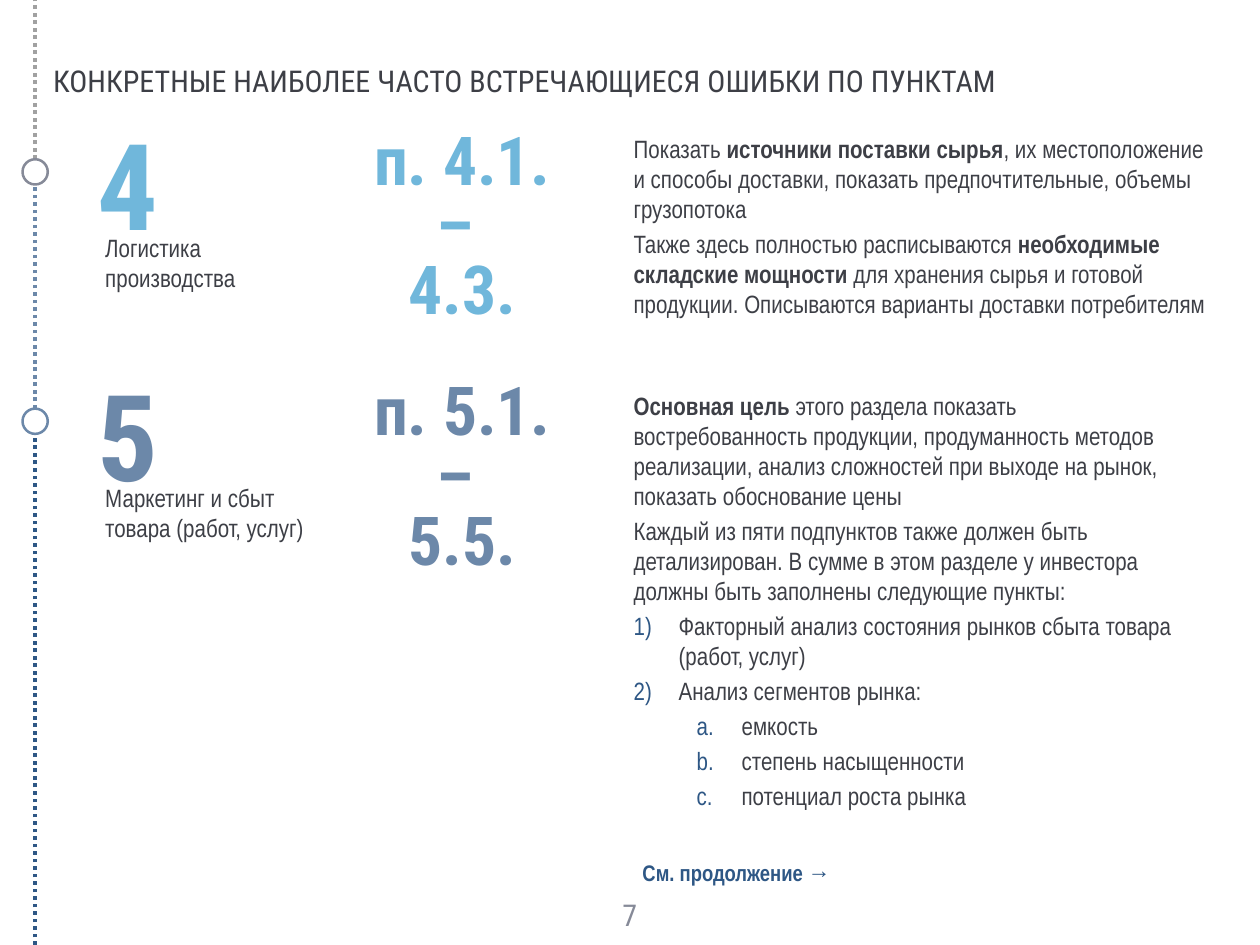
"""Build the slide on frequent mistakes in business plan sections 4 and 5."""
from lxml.etree import SubElement
from pptx import Presentation
from pptx.dml.color import RGBColor
from pptx.enum.dml import MSO_LINE_DASH_STYLE as Dash
from pptx.enum.shapes import MSO_CONNECTOR, MSO_SHAPE
from pptx.enum.text import MSO_ANCHOR as Anchor, MSO_AUTO_SIZE as AutoSize, PP_ALIGN as Align
from pptx.oxml.ns import qn
from pptx.util import Pt

COLORS = {
    "text": "3D3F46",
    "muted": "868A98",
    "sky": "70B7DB",
    "slate": "6C88A9",
    "navy": "2E5785",
    "gray": "A1A1A1",
    "white": "FFFFFF",
}
HEADING_FONT = "Roboto Condensed"
BODY_FONT = "Arial Narrow"
SLIDE_WIDTH, SLIDE_HEIGHT = 1008, 756
AXIS_X = 28.1
MARKER_SIZE = 20.2
MARKER_TOPS = (127.4, 326.9)
ROW_PITCH = 200.5
LIST_LEVELS = {"number": (0, 36, "arabicParenR"), "letter": (1, 86.4, "alphaLcPeriod")}

SECTIONS = [
    {
        "number": "4",
        "color": "sky",
        "caption": "Логистика производства",
        "points": ["п. 4.1. – ", "4.3."],
        "body_box": (506.9, 106.6, 465.1, 150.5),
        "body": [
            "Показать *источники поставки сырья*, их местоположение и способы доставки, "
            "показать предпочтительные, объемы грузопотока",
            "Также здесь полностью расписываются *необходимые складские мощности *"
            "для хранения сырья и готовой продукции. Описываются варианты доставки потребителям",
        ],
    },
    {
        "number": "5",
        "color": "slate",
        "caption": "Маркетинг и сбыт товара (работ, услуг)",
        "points": ["п. 5.1. – ", "5.5."],
        "body_box": (506.9, 312.5, 430.6, 344.2),
        "body": [
            "*Основная цель *этого раздела показать востребованность продукции, "
            "продуманность методов реализации, анализ сложностей при выходе на рынок, "
            "показать обоснование цены",
            "Каждый из пяти подпунктов также должен быть детализирован. В сумме в этом "
            "разделе у инвестора должны быть заполнены следующие пункты:",
            ("number", "Факторный анализ состояния рынков сбыта товара (работ, услуг)"),
            ("number", "Анализ сегментов рынка:"),
            ("letter", "емкость"),
            ("letter", "степень насыщенности"),
            ("letter", "потенциал роста рынка"),
        ],
    },
]


def rgb(name):
    """Return the named colour."""
    return RGBColor.from_string(COLORS[name])


def add_list_marker(paragraph, kind):
    """Turn a paragraph into an automatically numbered list item."""
    level, margin, scheme = LIST_LEVELS[kind]
    paragraph.level = level
    properties = paragraph._p.get_or_add_pPr()
    properties.set("marL", str(Pt(margin)))
    properties.set("indent", str(Pt(-36)))
    color = SubElement(properties, qn("a:buClr"))
    SubElement(color, qn("a:srgbClr"), val=COLORS["navy"])
    SubElement(properties, qn("a:buFont"), typeface="+mj-lt")
    SubElement(properties, qn("a:buAutoNum"), type=scheme)


def add_text(slide, box, paragraphs, *, size=20, font=BODY_FONT, color="text", bold=False,
             align=Align.LEFT, anchor=Anchor.TOP, gap=0, spacing=None, wrap=True,
             insets=(0, 0, 0, 0)):
    """Add a text box; asterisks switch bold, and a (kind, text) pair is a list item."""
    shape = slide.shapes.add_textbox(*map(Pt, box))
    frame = shape.text_frame
    frame.word_wrap = wrap
    frame.auto_size = AutoSize.NONE
    frame.vertical_anchor = anchor
    frame.margin_left, frame.margin_top, frame.margin_right, frame.margin_bottom = map(Pt, insets)
    for index, content in enumerate(paragraphs):
        paragraph = frame.add_paragraph() if index else frame.paragraphs[0]
        if isinstance(content, tuple):
            kind, content = content
            add_list_marker(paragraph, kind)
        paragraph.alignment = align
        if spacing:
            paragraph.line_spacing = spacing
        if index and gap:
            paragraph.space_before = Pt(gap)
        for part, text in enumerate(content.split("*")):
            if text:
                run = paragraph.add_run()
                run.text = text
                run.font.size = Pt(size)
                run.font.name = font
                run.font.bold = bold or part % 2 == 1
                run.font.color.rgb = rgb(color)
    return shape


def add_axis_segment(slide, start, end, color):
    """Add a dotted vertical piece of the timeline."""
    line = slide.shapes.add_connector(
        MSO_CONNECTOR.STRAIGHT, Pt(AXIS_X), Pt(start), Pt(AXIS_X), Pt(end))
    line.line.color.rgb = rgb(color)
    line.line.width = Pt(3)
    line.line.dash_style = Dash.ROUND_DOT
    SubElement(line._element.spPr, qn("a:effectLst"))


def add_marker(slide, top, color):
    """Add a ring on the timeline."""
    ring = slide.shapes.add_shape(
        MSO_SHAPE.OVAL, Pt(AXIS_X - MARKER_SIZE / 2), Pt(top), Pt(MARKER_SIZE), Pt(MARKER_SIZE))
    ring.shadow.inherit = False
    ring.fill.solid()
    ring.fill.fore_color.rgb = rgb("white")
    ring.line.color.rgb = rgb(color)
    ring.line.width = Pt(2)


def add_timeline(slide):
    """Add the dotted axis with its rings."""
    first, second = MARKER_TOPS
    add_axis_segment(slide, first, 0, "gray")
    add_axis_segment(slide, second, first + MARKER_SIZE, "slate")
    add_axis_segment(slide, SLIDE_HEIGHT, second + MARKER_SIZE, "navy")
    for top, color in zip(MARKER_TOPS, ("muted", "slate")):
        add_marker(slide, top, color)


def add_section(slide, section, offset):
    """Add one section: number, caption, point range and explanation."""
    accent = {"font": HEADING_FONT, "color": section["color"], "bold": True, "align": Align.CENTER}
    add_text(slide, (80.6, 88.6 + offset, 43.9, 116.6), [section["number"]],
             size=96, wrap=False, **accent)
    add_text(slide, (84.2, 185.8 + offset, 176.4, 48.2), [section["caption"]])
    add_text(slide, (293, 106.6 + offset, 154, 104.4), section["points"],
             size=54, spacing=0.8, **accent)
    add_text(slide, section["body_box"], section["body"], gap=4)


def main():
    """Build and save the slide."""
    presentation = Presentation()
    presentation.slide_width, presentation.slide_height = Pt(SLIDE_WIDTH), Pt(SLIDE_HEIGHT)
    slide = presentation.slides.add_slide(presentation.slide_layouts[6])
    add_text(slide, (484, 712, 39.6, 39.6), ["7"], size=24, font=HEADING_FONT,
             color="muted", align=Align.CENTER, anchor=Anchor.MIDDLE)
    add_text(slide, (AXIS_X, 50.4, 952.5, 28.8),
             ["КОНКРЕТНЫЕ НАИБОЛЕЕ ЧАСТО ВСТРЕЧАЮЩИЕСЯ ОШИБКИ ПО ПУНКТАМ"],
             size=24, font=HEADING_FONT, insets=(14.4, 0, 10, 0))
    for index, section in enumerate(SECTIONS):
        add_section(slide, section, index * ROW_PITCH)
    add_timeline(slide)
    add_text(slide, (506.9, 684, 167, 28.8), ["См. продолжение →"], size=18,
             color="navy", bold=True, insets=(7.2, 3.6, 7.2, 3.6))
    presentation.save("out.pptx")


if __name__ == "__main__":
    main()
